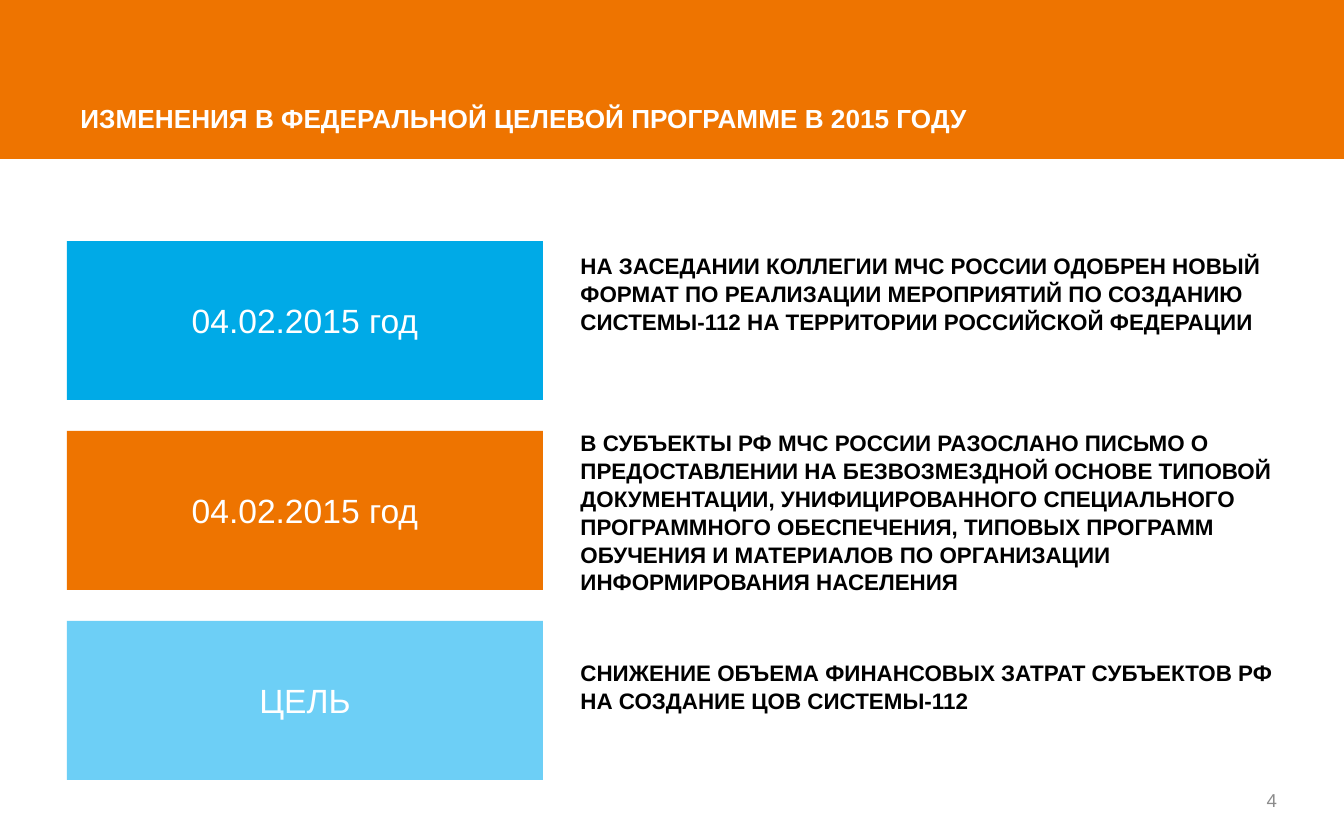
"""Build the slide on the 2015 changes to the federal target programme."""
from dataclasses import dataclass

from lxml import etree
from pptx import Presentation
from pptx.dml.color import RGBColor
from pptx.enum.shapes import MSO_SHAPE
from pptx.enum.text import MSO_ANCHOR, MSO_AUTO_SIZE, PP_ALIGN
from pptx.oxml.ns import qn
from pptx.util import Inches, Pt

RECTANGLE = MSO_SHAPE.RECTANGLE
TOP, MIDDLE = MSO_ANCHOR.TOP, MSO_ANCHOR.MIDDLE
LEFT, CENTER, RIGHT = PP_ALIGN.LEFT, PP_ALIGN.CENTER, PP_ALIGN.RIGHT
NO_AUTOFIT = MSO_AUTO_SIZE.NONE

TITLE = "ИЗМЕНЕНИЯ В ФЕДЕРАЛЬНОЙ ЦЕЛЕВОЙ ПРОГРАММЕ В 2015 ГОДУ"
LABELS = [
    ("04.02.2015 год", "00AAE7"),
    ("04.02.2015 год", "EE7400"),
    ("ЦЕЛЬ", "6DCFF6"),
]
STATEMENTS = [
    ("НА ЗАСЕДАНИИ КОЛЛЕГИИ МЧС РОССИИ ОДОБРЕН НОВЫЙ ФОРМАТ ПО РЕАЛИЗАЦИИ "
     "МЕРОПРИЯТИЙ ПО СОЗДАНИЮ СИСТЕМЫ-112 НА ТЕРРИТОРИИ РОССИЙСКОЙ ФЕДЕРАЦИИ", 0),
    ("В СУБЪЕКТЫ РФ МЧС РОССИИ РАЗОСЛАНО ПИСЬМО О ПРЕДОСТАВЛЕНИИ НА "
     "БЕЗВОЗМЕЗДНОЙ ОСНОВЕ ТИПОВОЙ ДОКУМЕНТАЦИИ, УНИФИЦИРОВАННОГО СПЕЦИАЛЬНОГО "
     "ПРОГРАММНОГО ОБЕСПЕЧЕНИЯ, ТИПОВЫХ ПРОГРАММ ОБУЧЕНИЯ И МАТЕРИАЛОВ ПО "
     "ОРГАНИЗАЦИИ ИНФОРМИРОВАНИЯ НАСЕЛЕНИЯ", 50),
    ("СНИЖЕНИЕ ОБЪЕМА ФИНАНСОВЫХ ЗАТРАТ СУБЪЕКТОВ РФ НА СОЗДАНИЕ ЦОВ "
     "СИСТЕМЫ-112", 33.5),
]
PAGE_NUMBER = "4"


@dataclass(frozen=True)
class Theme:
    """Colours, type sizes and font of the slide."""
    font: str = "Arial"
    banner: str = "EE7400"
    light: str = "FFFFFF"
    dark: str = "000000"
    muted: str = "8C8C8C"
    title_size: int = 14
    label_size: int = 18
    body_size: int = 12
    number_size: int = 10


THEME = Theme()
WIDTH, HEIGHT = 1344, 840
SCALE = Inches(10) / WIDTH
BANNER = (0, 0, WIDTH, 159)
TITLE_BOX = (67, 95, 1031, 46)
BODY_BOX = (567, 244, 754, 574)
NUMBER_BOX = (964, 778, 313, 45)
LABEL_LEFT, LABEL_TOP, LABEL_WIDTH, LABEL_HEIGHT = 67, 241, 476, 159
LABEL_PITCH = 190


def emu(box):
    """Convert a box in px to EMU."""
    return [round(length * SCALE) for length in box]


def place(shape, box):
    """Move and size a shape."""
    shape.left, shape.top, shape.width, shape.height = emu(box)


def set_frame(shape, anchor):
    """Set wrapping, fitting and anchoring, and return the text frame."""
    frame = shape.text_frame
    frame.word_wrap = True
    frame.auto_size = NO_AUTOFIT
    frame.vertical_anchor = anchor
    return frame


def write(paragraph, text, size, color, align=LEFT, bold=False):
    """Add one formatted run to a paragraph."""
    paragraph.alignment = align
    run = paragraph.add_run()
    run.text = text
    font = run.font
    font.name, font.size, font.bold = THEME.font, Pt(size), bold
    font.color.rgb = RGBColor.from_string(color)


def add_rectangle(slide, box, color):
    """Add a flat filled rectangle."""
    shape = slide.shapes.add_shape(RECTANGLE, *emu(box))
    shape.shadow.inherit = False
    shape.fill.solid()
    shape.fill.fore_color.rgb = RGBColor.from_string(color)
    shape.line.fill.background()
    return shape


def fill_title(slide):
    """Fill the title placeholder."""
    title = slide.shapes.title
    place(title, TITLE_BOX)
    paragraph = set_frame(title, MIDDLE).paragraphs[0]
    write(paragraph, TITLE, THEME.title_size, THEME.light, bold=True)


def fill_body(slide):
    """Fill the body placeholder with unbulleted statements."""
    body = slide.placeholders[1]
    place(body, BODY_BOX)
    frame = set_frame(body, TOP)
    for index, (text, space) in enumerate(STATEMENTS):
        paragraph = frame.add_paragraph() if index else frame.paragraphs[0]
        properties = paragraph._p.get_or_add_pPr()
        properties.set("marL", "0")
        properties.set("indent", "0")
        etree.SubElement(properties, qn("a:buNone"))
        paragraph.space_before = Pt(space)
        paragraph.line_spacing = 1.04
        write(paragraph, text, THEME.body_size, THEME.dark, bold=True)


def add_labels(slide):
    """Stack the coloured labels at equal steps."""
    for index, (text, color) in enumerate(LABELS):
        top = LABEL_TOP + index * LABEL_PITCH
        label = add_rectangle(slide, (LABEL_LEFT, top, LABEL_WIDTH, LABEL_HEIGHT), color)
        paragraph = set_frame(label, MIDDLE).paragraphs[0]
        write(paragraph, text, THEME.label_size, THEME.light, CENTER)


def add_page_number(slide):
    """Add the page number at the lower right."""
    frame = set_frame(slide.shapes.add_textbox(*emu(NUMBER_BOX)), MIDDLE)
    frame.margin_left = frame.margin_right = frame.margin_top = frame.margin_bottom = 0
    write(frame.paragraphs[0], PAGE_NUMBER, THEME.number_size, THEME.muted, RIGHT)


def main():
    """Build and save the presentation."""
    presentation = Presentation()
    presentation.slide_width, presentation.slide_height = emu((WIDTH, HEIGHT))
    slide = presentation.slides.add_slide(presentation.slide_layouts[1])
    banner = add_rectangle(slide, BANNER, THEME.banner)
    slide.shapes.title._element.addprevious(banner._element)
    fill_title(slide)
    fill_body(slide)
    add_labels(slide)
    add_page_number(slide)
    presentation.save("out.pptx")


if __name__ == "__main__":
    main()
